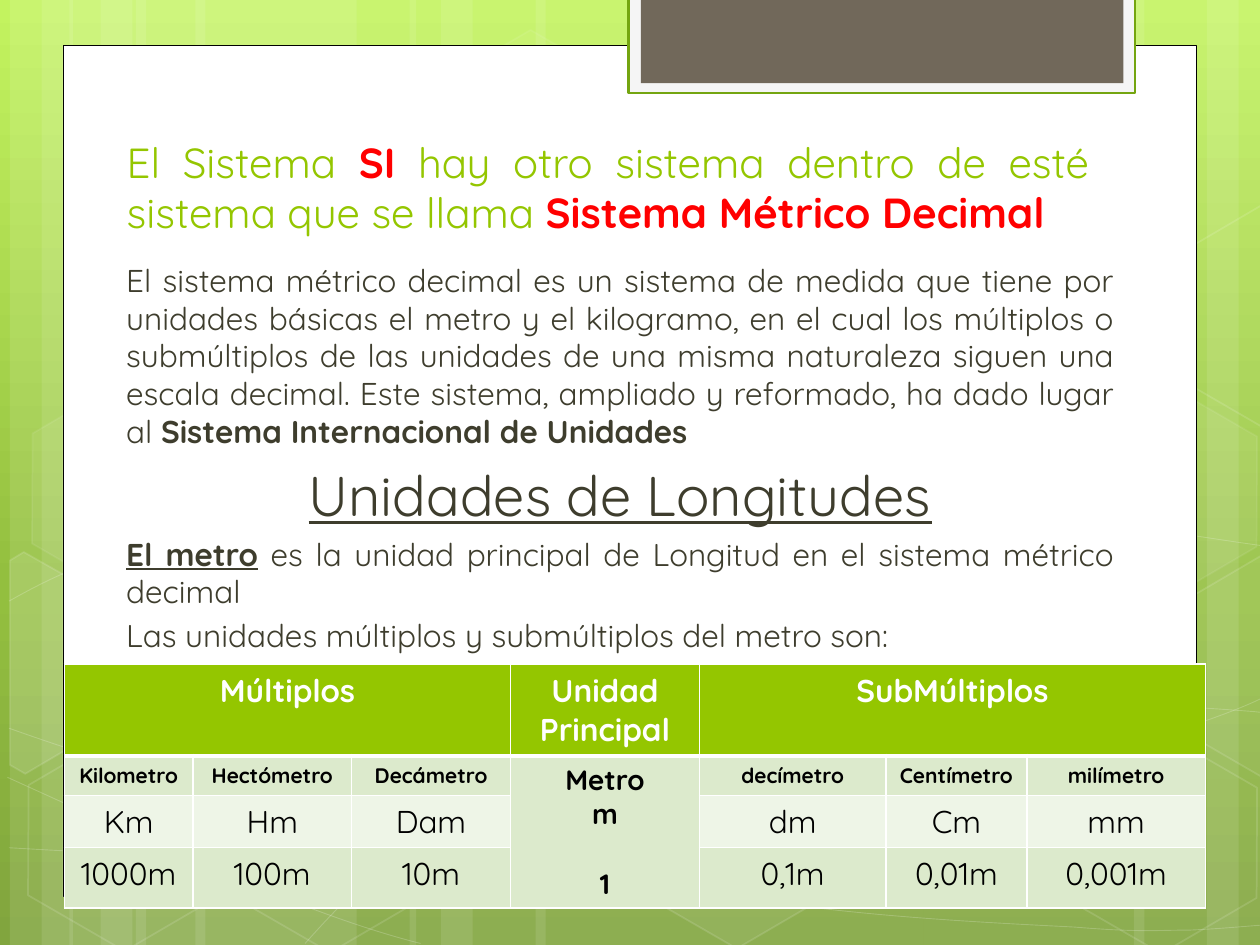
from copy import deepcopy
from dataclasses import dataclass

from lxml import etree
from pptx import Presentation
from pptx.dml.color import RGBColor
from pptx.enum import shapes, text
from pptx.oxml.ns import qn
from pptx.util import Cm, Pt


@dataclass(frozen=True)
class Theme:
    font: str = "Quicksand"
    white: str = "FFFFFF"
    black: str = "000000"
    green: str = "94C600"
    edge: str = "74A510"
    red: str = "FF0000"
    ink: str = "3E3D2D"
    pale: str = "F5F5F5"
    brown: str = "71685A"
    band: str = "DCEACC"
    light: str = "EEF5E7"
    sky: tuple = ((0, "C3F35F"), (0.62, "93BF3F"), (1, "81A53E"))
    title: int = 24
    head: int = 32
    body: int = 18
    unit: int = 16
    small: int = 12


T = Theme()
ALIGN = text.PP_ALIGN
KIND = shapes.MSO_SHAPE

STRIPES = [
    (2.74, 4.45), (0.2, 1.27), (0.84, 2.11), (3.94, 4.45), (1.4, 1.27), (2.03, 2.11),
    (18.62, 4.45), (24.33, 1.27), (22.86, 2.11), (10.8, 7.82), (8.26, 1.27), (8.89, 2.11),
]
CURVES = [
    [(0.18, 17.09), (1.55, 17.17), (2.92, 17.25), (4.83, 17.22), (6.73, 17.2), (9.09, 17.15),
     (11.63, 16.89), (14.17, 16.64), (17.78, 16.15), (20.12, 15.67), (22.43, 15.19),
     (24.82, 14.43), (25.58, 14)],
    [(0.18, 12.12), (0.91, 11.71), (1.65, 11.33), (3.07, 10.95), (4.52, 10.57), (6.58, 10.01),
     (8.81, 9.83), (11.07, 9.65), (13.82, 9.63), (16.61, 9.83), (19.41, 10.03),
     (24.05, 10.82), (25.58, 11.02)],
    [(0.15, 15.67), (3.23, 17.07), (6.27, 18.47), (8.48, 19.02)],
    [(0.18, 14.68), (0.97, 14.96), (1.78, 15.24), (3.25, 15.65), (4.72, 16.03), (6.93, 16.66),
     (9.07, 17.09), (11.18, 17.53), (13.84, 17.98), (15.95, 18.24), (18.06, 18.52),
     (20.32, 18.62), (21.67, 18.69), (22.99, 18.8), (23.34, 18.75), (24, 18.75),
     (24.66, 18.72), (25.12, 18.67), (25.58, 18.64)],
    [(6.15, 19.02), (6.6, 18.52), (7.06, 18.01), (7.67, 17.55), (8.28, 17.09), (9.14, 16.59),
     (9.86, 16.23), (10.57, 15.88), (11, 15.72), (11.94, 15.47), (12.85, 15.21),
     (14.55, 14.86), (15.44, 14.68), (16.36, 14.5), (16.48, 14.5), (17.27, 14.45),
     (18.06, 14.38), (19.3, 14.3), (20.17, 14.27), (21.06, 14.25), (22.5, 14.27),
     (22.5, 14.27), (22.5, 14.27), (24.21, 14.27), (24.21, 14.27), (24.66, 14.3),
     (25.1, 14.33), (25.32, 14.35), (25.55, 14.38), (25.48, 14.35), (25.55, 14.38)],
]
HEXES = [
    (8.48, 0.91, 4, 8), (12.62, 14.96, 6, 12), (0.28, 15.01, 0, 12), (0.36, 7.92, 7, 8),
    (4.42, 15.04, 0, 12), (19.13, 11.51, 10, 12), (21.18, 15.06, 0, 12), (21.18, 7.98, 7, 8),
]
CUT_HEXES = [
    (10, [(0.2, 11.3), (0.48, 11.13), (2.44, 12.24), (2.41, 14.48), (0.51, 15.6), (0.2, 15.42)]),
    (4, [(23.52, 12.32), (25.43, 11.2), (25.63, 11.33), (25.63, 15.57), (25.45, 15.67), (23.52, 14.55)]),
    (0, [(23.52, 5.26), (25.43, 4.14), (25.65, 4.27), (25.63, 8.51), (25.45, 8.61), (23.52, 7.49)]),
]
COLS = [2.59, 3.2, 3.2, 3.81, 3.76, 2.84, 3.6]
ROWS = [1.79, 0.8, 1.03, 1.22]
CELLS = [
    ["Múltiplos", "", "", "Unidad Principal", "SubMúltiplos", "", ""],
    ["Kilometro", "Hectómetro", "Decámetro", "Metro\nm\n1", "decímetro", "Centímetro", "milímetro"],
    ["Km", "Hm", "Dam", "", "dm", "Cm", "mm"],
    ["1000m", "100m", "10m", "", "0,1m", "0,01m", "0,001m"],
]


def veil(fill, alpha):
    if alpha < 100:
        etree.SubElement(fill[0], qn("a:alpha"), val=str(alpha * 1000))


def dress(shape, fill=T.white, alpha=100, line=None, width=1, fade=100):
    shape.shadow.inherit = False
    if alpha:
        shape.fill.solid()
        shape.fill.fore_color.rgb = RGBColor.from_string(fill)
        veil(shape.element.spPr.find(qn("a:solidFill")), alpha)
    else:
        shape.fill.background()
    if line:
        shape.line.width = Pt(width)
        shape.line.color.rgb = RGBColor.from_string(line)
        veil(shape.element.spPr.find(qn("a:ln")).find(qn("a:solidFill")), fade)
    else:
        shape.line.fill.background()


def block(slide, kind, spot, **look):
    shape = slide.shapes.add_shape(kind, *map(Cm, spot))
    dress(shape, **look)
    return shape


def trace(slide, points, close, **look):
    spots = [(Cm(x), Cm(y)) for x, y in points]
    pen = slide.shapes.build_freeform(*spots[0])
    pen.add_line_segments(spots[1:], close=close)
    shape = pen.convert_to_shape()
    dress(shape, **look)
    return shape


def bend(shape):
    legs = list(shape.element.iter(qn("a:lnTo")))
    for i in range(0, len(legs), 3):
        curve = etree.Element(qn("a:cubicBezTo"))
        legs[i].addprevious(curve)
        for leg in legs[i:i + 3]:
            curve.append(leg[0])
            leg.getparent().remove(leg)


def style(run, size, color, bold=False, line=False):
    font = run.font
    font.name, font.size, font.bold, font.underline = T.font, Pt(size), bold, line
    font.color.rgb = RGBColor.from_string(color)


def write(par, runs, align, gap):
    par.alignment, par.space_before, par.line_spacing = align, Pt(gap), 1.0
    for words, *look in runs:
        run = par.add_run()
        run.text = words
        style(run, *look)


def place(slide, holder, spot, anchor):
    holder.left, holder.top, holder.width, holder.height = map(Cm, spot)
    frame = holder.text_frame
    frame.auto_size, frame.vertical_anchor = text.MSO_AUTO_SIZE.NONE, anchor
    slide.shapes.element.append(holder.element)
    return frame


def backdrop(slide):
    fill = slide.background.fill
    fill.gradient()
    fill.gradient_angle = 270
    stops = next(slide.element.iter(qn("a:gsLst")))
    stops.append(deepcopy(stops[0]))
    for stop, (spot, color) in zip(fill.gradient_stops, T.sky):
        stop.position, stop.color.rgb = spot, RGBColor.from_string(color)
    for left, width in STRIPES:
        block(slide, KIND.RECTANGLE, (left, 0, width, 19.05), alpha=10)
    for knots in CURVES:
        bend(trace(slide, knots, False, alpha=0, line=T.white, width=0.5, fade=20))
    for left, top, alpha, fade in HEXES:
        shape = block(slide, KIND.HEXAGON, (left, top, 4.45, 3.86), alpha=alpha, line=T.white, fade=fade)
        shape.adjustments[0], shape.rotation = 0.285, 30
    for alpha, points in CUT_HEXES:
        trace(slide, points, True, alpha=alpha, line=T.white, fade=12)
    block(slide, KIND.RECTANGLE, (1.27, 0.91, 22.86, 17.17), line=T.black, width=0.5)
    block(slide, KIND.RECTANGLE, (12.67, -0.05, 10.21, 1.93), fill=T.pale, line=T.edge, width=1.25)
    block(slide, KIND.RECTANGLE, (12.92, -0.05, 9.73, 1.73), fill=T.brown)


def prose(slide):
    title, body = list(slide.placeholders)
    frame = place(slide, title, (2.3, 1.73, 19.91, 3.18), text.MSO_ANCHOR.BOTTOM)
    write(frame.paragraphs[0], [
        ("El Sistema ", T.title, T.green), ("SI", T.title, T.red, True),
        (" hay otro sistema dentro de esté sistema que se llama ", T.title, T.green),
        ("Sistema Métrico Decimal", T.title, T.red, True)], ALIGN.JUSTIFY, 0)
    frame = place(slide, body, (2.11, 5.13, 20.6, 9.75), text.MSO_ANCHOR.TOP)
    lines = [
        [("El sistema métrico decimal es un sistema de medida que tiene por unidades básicas el metro "
          "y el kilogramo, en el cual los múltiplos o submúltiplos de las unidades de una misma "
          "naturaleza siguen una escala decimal. Este sistema, ampliado y reformado, ha dado lugar al ",
          T.body, T.ink), ("Sistema Internacional de Unidades", T.body, T.ink, True)],
        [("Unidades de Longitudes", T.head, T.ink, False, True)],
        [("El metro", T.body, T.ink, True, True),
         (" es la unidad principal de Longitud en el sistema métrico decimal", T.body, T.ink)],
        [("Las unidades múltiplos y submúltiplos del metro son:", T.body, T.ink)],
    ]
    for i, runs in enumerate(lines):
        par = frame.add_paragraph() if i else frame.paragraphs[0]
        size = runs[0][1]
        write(par, runs, ALIGN.CENTER if size == T.head else ALIGN.JUSTIFY, size * 0.2)
        props = par._p.get_or_add_pPr()
        props.set("marL", str(Cm(0.18)))
        props.set("indent", "0")
        etree.SubElement(props, qn("a:buNone"))


def rule(cell, row):
    props = cell._tc.get_or_add_tcPr()
    thick = {"T": row == 1, "B": row == 0}
    for i, side in enumerate("LRTB"):
        line = etree.Element(qn("a:ln" + side), w=str(Pt(3 if thick.get(side) else 1)))
        fill = etree.SubElement(line, qn("a:solidFill"))
        etree.SubElement(fill, qn("a:srgbClr"), val=T.white)
        props.insert(i, line)


def units(slide):
    spot = map(Cm, (1.3, 13.39, sum(COLS), sum(ROWS)))
    grid = slide.shapes.add_table(len(ROWS), len(COLS), *spot).table
    for col, width in zip(grid.columns, COLS):
        col.width = Cm(width)
    for row, height in zip(grid.rows, ROWS):
        row.height = Cm(height)
    fills = (T.green, T.band, T.light, T.band)
    sizes = (T.body, T.small, T.body, T.body)
    for r, words in enumerate(CELLS):
        for c, word in enumerate(words):
            cell = grid.cell(r, c)
            cell.fill.solid()
            merged = c == 3 and r
            cell.fill.fore_color.rgb = RGBColor.from_string(T.band if merged else fills[r])
            rule(cell, r)
            cell.text_frame.text = word
            for par in cell.text_frame.paragraphs:
                par.alignment = ALIGN.CENTER
                if par.text == "1":
                    par.space_before = Pt(20)
                for run in par.runs:
                    style(run, T.unit if merged else sizes[r], T.black if r else T.white, r < 2)
    for first, last in (((0, 0), (0, 2)), ((0, 4), (0, 6)), ((1, 3), (3, 3))):
        grid.cell(*first).merge(grid.cell(*last))


def main():
    deck = Presentation()
    deck.slide_width, deck.slide_height = Cm(25.4), Cm(19.05)
    slide = deck.slides.add_slide(deck.slide_layouts[1])
    backdrop(slide)
    prose(slide)
    units(slide)
    deck.save("out.pptx")


if __name__ == "__main__":
    main()
